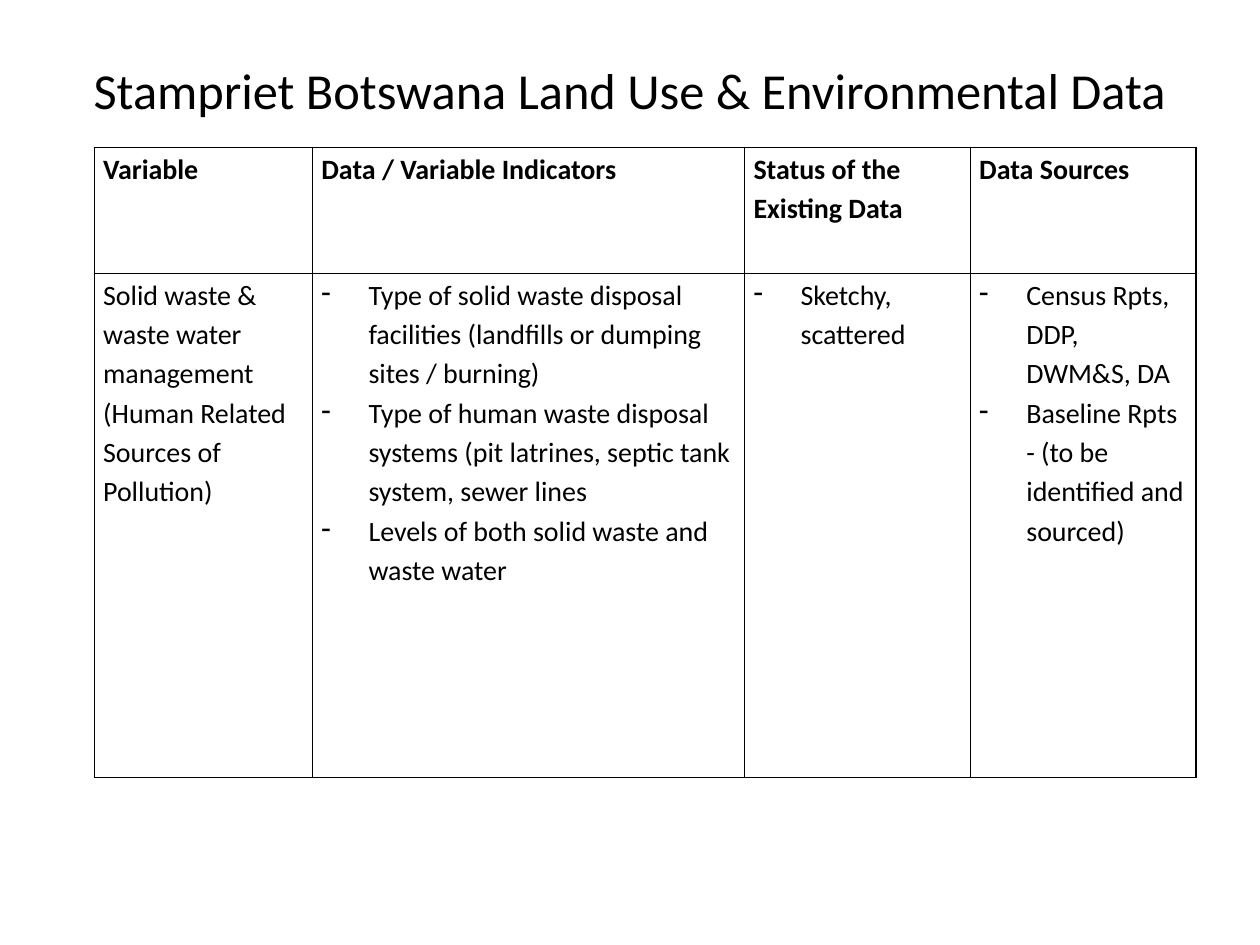
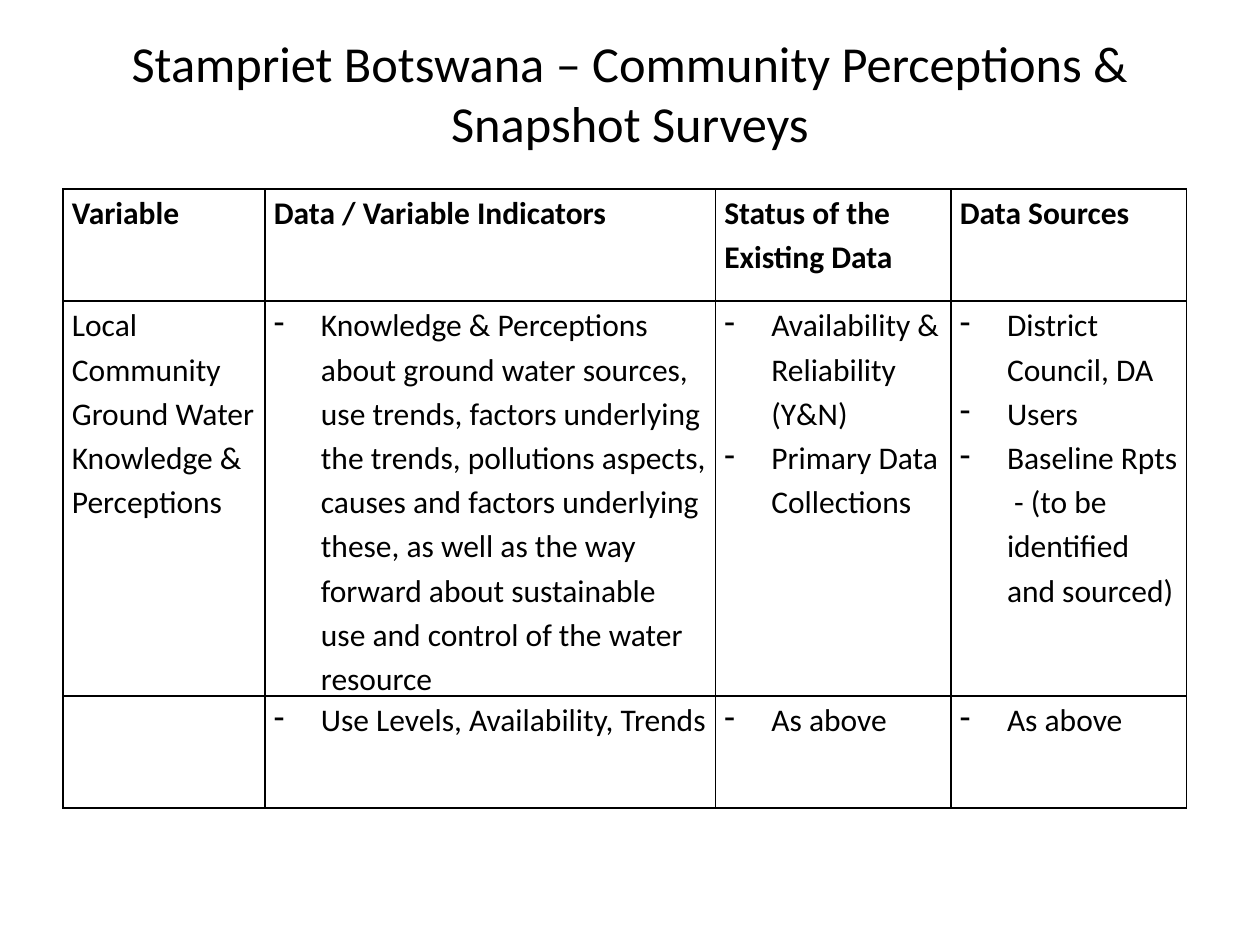
"""Build two slides of data tables about the Stampriet area in Botswana."""
from dataclasses import dataclass

from lxml import etree
from pptx import Presentation
from pptx.dml.color import RGBColor
from pptx.enum.text import MSO_ANCHOR, PP_ALIGN
from pptx.oxml.ns import qn
from pptx.util import Cm, Pt

MIDDLE = MSO_ANCHOR.MIDDLE
CENTER = PP_ALIGN.CENTER


@dataclass
class Theme:
    font: str = "Calibri"
    ink: str = "000000"
    title: float = 28.8
    rule: float = 1
    leading: float = 1.15
    inset: float = 0.18
    indent: float = 0.95


theme = Theme()


def style(para, size, bold=False):
    font = para.font
    font.name, font.size, font.bold = theme.font, Pt(size), bold
    font.color.rgb = RGBColor.from_string(theme.ink)


def border(cell):
    props = cell._tc.get_or_add_tcPr()
    for side in ("lnL", "lnR", "lnT", "lnB"):
        line = etree.SubElement(props, qn(f"a:{side}"), w=str(Pt(theme.rule)))
        fill = etree.SubElement(line, qn("a:solidFill"))
        etree.SubElement(fill, qn("a:srgbClr"), val=theme.ink)


HEADS = [["Variable"], ["Data / Variable Indicators"],
         ["Status of the Existing Data"], ["Data Sources"]]
BASE = "Baseline Rpts  - (to be identified and sourced)"

pages = [
    dict(
        title="Stampriet Botswana Land Use & Environmental Data",
        depth=2.08, left=1.9, top=2.97, size=16,
        cols=[4.4, 8.71, 4.55, 4.55], rows=[2.54, 10.16],
        body=[[
            ["Solid waste & waste water management",
             "(Human Related Sources of Pollution)"],
            ["Type of solid waste disposal facilities "
             "(landfills or dumping sites / burning)",
             "Type of human waste disposal systems "
             "(pit latrines, septic tank system, sewer lines",
             "Levels of both solid waste and waste water"],
            ["Sketchy, scattered"],
            ["Census Rpts, DDP, DWM&S, DA", BASE],
        ]],
    ),
    dict(
        title="Stampriet Botswana – Community Perceptions & Snapshot Surveys",
        depth=2.2, left=1.27, top=3.81, size=18,
        cols=[4.07, 9.08, 4.75, 4.75], rows=[2.26, 7.96, 2.26],
        body=[
            [
                ["Local Community Ground Water Knowledge & Perceptions"],
                ["Knowledge & Perceptions about ground water sources, "
                 "use trends, factors underlying the trends, pollutions "
                 "aspects, causes and factors underlying these, as well as "
                 "the way forward about sustainable use and control of "
                 "the water resource"],
                ["Availability & Reliability (Y&N)",
                 "Primary Data Collections"],
                ["District Council, DA", "Users", BASE],
            ],
            [[], ["Use Levels, Availability, Trends"],
             ["As above"], ["As above"]],
        ],
    ),
]

deck = Presentation()
deck.slide_width, deck.slide_height = Cm(25.4), Cm(19.05)

for page in pages:
    slide = deck.slides.add_slide(deck.slide_layouts[6])
    box = slide.shapes.add_textbox(Cm(1.27), Cm(0.76), Cm(22.86), Cm(page["depth"]))
    frame = box.text_frame
    frame.word_wrap, frame.vertical_anchor = True, MIDDLE
    frame.text = page["title"]
    frame.paragraphs[0].alignment = CENTER
    style(frame.paragraphs[0], theme.title)

    cols, rows = page["cols"], page["rows"]
    table = slide.shapes.add_table(
        len(rows), len(cols), Cm(page["left"]), Cm(page["top"]),
        Cm(sum(cols)), Cm(sum(rows))).table
    table.first_row = table.horz_banding = False
    for col, width in zip(table.columns, cols):
        col.width = Cm(width)
    for row, height in zip(table.rows, rows):
        row.height = Cm(height)

    for y, line in enumerate([HEADS] + page["body"]):
        for x, items in enumerate(line):
            cell = table.cell(y, x)
            border(cell)
            cell.fill.background()
            cell.margin_left = cell.margin_right = Cm(theme.inset)
            cell.margin_top = cell.margin_bottom = 0
            cell.text = "\n".join(items)
            for para in cell.text_frame.paragraphs:
                para.line_spacing = theme.leading
                if y and x:
                    props = para._p.get_or_add_pPr()
                    props.set("marL", str(Cm(theme.indent)))
                    props.set("indent", str(-Cm(theme.indent)))
                    etree.SubElement(props, qn("a:buChar"), char="-")
                style(para, page["size"], bold=y == 0)

deck.save("out.pptx")
